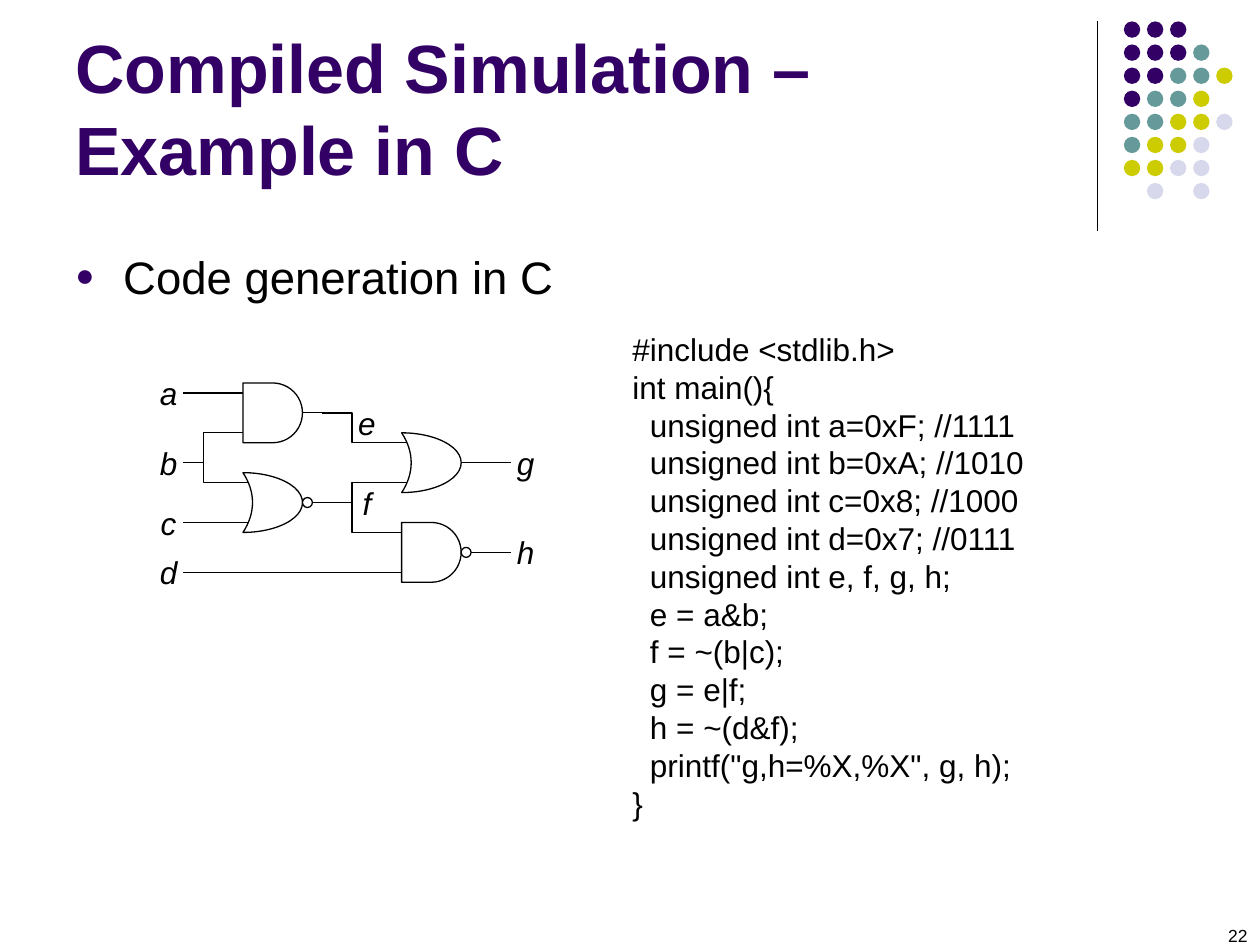
from dataclasses import dataclass

from lxml import etree
from pptx import Presentation
from pptx import util as u
from pptx.dml.color import RGBColor
from pptx.enum import shapes, text
from pptx.oxml.ns import qn


@dataclass(frozen=True)
class Theme:
    font: str = "Arial"
    ink: str = "000000"
    paper: str = "FFFFFF"
    purple: str = "330066"
    teal: str = "669999"
    olive: str = "CCCC00"
    lilac: str = "D8D8EC"
    title: int = 39
    body: int = 26
    code: int = 18
    page: int = 10
    line: float = 0.75


T = Theme()
W, H = u.Inches(10), u.Inches(7.5)
SHAPE = shapes.MSO_SHAPE
RIGHT, LEFT = 3, 1  # connection sites

DOTS = ["PPP", "PPPT", "PPTTO", "PTTO", "TTOOL", "TOOL", "OOLL", " L L"]
DOT_COLORS = {"P": T.purple, "T": T.teal, "O": T.olive, "L": T.lilac}

CODE = [  # indent level, text
    (0, "#include <stdlib.h>"),
    (0, "int main(){"),
    (1, "unsigned int a=0xF; //1111"),
    (1, "unsigned int b=0xA; //1010"),
    (1, "unsigned int c=0x8; //1000"),
    (1, "unsigned int d=0x7; //0111"),
    (1, "unsigned int e, f, g, h;"),
    (1, "e = a&b;"),
    (1, "f = ~(b|c);"),
    (1, "g = e|f;"),
    (1, "h = ~(d&f);"),
    (1, 'printf("g,h=%X,%X", g, h);'),
    (0, "}"),
]

# Circuit grid: 39 columns by 22 rows
LABELS = {"a": (0, 0), "b": (0, 7), "c": (0, 13), "d": (0, 18),
          "e": (20, 3), "f": (20, 11), "g": (36, 7), "h": (36, 16)}
GATES = [  # column, row, outline, inverted output
    (25, 6, SHAPE.MOON, False),
    (9, 1, SHAPE.FLOWCHART_DELAY, False),
    (25, 15, SHAPE.FLOWCHART_DELAY, True),
    (9, 10, SHAPE.MOON, True),
]
INPUT_WIRES = [("a", 7, 2), ("c", 7, 15), ("d", 23, 20)]
OUTPUT_WIRES = [("g", 33, 9), ("h", 33, 18)]
ELBOWS = [(3, 9, 7, 11), (3, 9, 7, 6), (17, 4, 23, 7),
          (17, 13, 23, 11), (17, 13, 23, 16)]


def share(x, y, w, h):
    """Box from percentages of the slide's width and height."""
    return tuple(round(v * side / 100) for v, side in ((x, W), (y, H), (w, W), (h, H)))


def style(p, size, color=T.ink, bold=False, italic=False):
    for r in p.runs:
        f = r.font
        f.name, f.size, f.bold, f.italic = T.font, u.Pt(size), bold, italic
        f.color.rgb = RGBColor.from_string(color)


def add_text(s, box, lines, size, **look):
    tf = s.shapes.add_textbox(*box).text_frame
    tf.word_wrap = True
    tf.text = "\n".join(lines)
    for p in tf.paragraphs:
        style(p, size, **look)
    return tf


def add_shape(s, kind, box, fill=None, line=None):
    sp = s.shapes.add_shape(kind, *box)
    sp.shadow.inherit = False
    if fill:
        sp.fill.solid()
        sp.fill.fore_color.rgb = RGBColor.from_string(fill)
    else:
        sp.fill.background()
    if line:
        sp.line.color.rgb = RGBColor.from_string(line)
        sp.line.width = u.Pt(T.line)
    else:
        sp.line.fill.background()
    return sp


def add_line(s, start, end, kind=shapes.MSO_CONNECTOR.STRAIGHT):
    c = s.shapes.add_connector(kind, *start, *end)
    c.line.color.rgb = RGBColor.from_string(T.ink)
    c.line.width = u.Pt(T.line)
    etree.SubElement(c._element.spPr, qn("a:effectLst"))
    return c


def dot_ornament(s, box):
    x, y, w, h = box
    cell = w / 5
    size = round(cell * 0.71)
    for row, marks in enumerate(DOTS):
        for col, mark in enumerate(marks):
            if mark in DOT_COLORS:
                at = round(x + col * cell), round(y + row * h / len(DOTS))
                add_shape(s, SHAPE.OVAL, (*at, size, size), DOT_COLORS[mark])


def bullet_body(s, box, line):
    p = add_text(s, box, [line], T.body).paragraphs[0]
    p.line_spacing = 1.1
    pPr = p._p.get_or_add_pPr()
    indent = u.Inches(0.38)
    pPr.set("marL", str(indent))
    pPr.set("indent", str(-indent))
    before = etree.SubElement(pPr, qn("a:spcBef"))
    etree.SubElement(before, qn("a:spcPct"), val="20000")
    color = etree.SubElement(pPr, qn("a:buClr"))
    etree.SubElement(color, qn("a:srgbClr"), val=T.purple)
    etree.SubElement(pPr, qn("a:buSzPct"), val="70000")
    etree.SubElement(pPr, qn("a:buFont"), typeface=T.font)
    etree.SubElement(pPr, qn("a:buChar"), char="●")


def code_listing(s, box):
    tf = add_text(s, box, [line for _, line in CODE], T.code)
    for p, (level, _) in zip(tf.paragraphs, CODE):
        p._p.get_or_add_pPr().set("marL", str(level * u.Inches(0.14)))


def circuit(s, box):
    x, y, w, h = box

    def at(col, row):
        return round(x + col * w / 39), round(y + row * h / 22)

    def cells(col, row, cols, rows):
        (x1, y1), (x2, y2) = at(col, row), at(col + cols, row + rows)
        return x1, y1, x2 - x1, y2 - y1

    # Gates, with their pins behind them
    for col, row, kind, inverted in GATES:
        for start, pin in ((-2, 1), (-2, 5), (4, 3)):
            add_line(s, at(col + start, row + pin), at(col + start + 4, row + pin))
        gate = add_shape(s, kind, cells(col, row, 6, 6), T.paper, T.ink)
        if kind == SHAPE.MOON:
            gate.rotation = 180
            gate.adjustments[0] = 0.84
        if inverted:
            add_shape(s, SHAPE.OVAL, cells(col + 6, row + 2.5, 1, 1), T.paper, T.ink)

    # Signal names
    names = {}
    for name, (col, row) in LABELS.items():
        sp = names[name] = add_shape(s, SHAPE.FLOWCHART_PROCESS, cells(col, row, 3, 4))
        tf = sp.text_frame
        tf.text = name
        tf.word_wrap = False
        tf.vertical_anchor = text.MSO_ANCHOR.MIDDLE
        tf.margin_left = tf.margin_right = tf.margin_top = tf.margin_bottom = 0
        tf.paragraphs[0].alignment = text.PP_ALIGN.CENTER
        style(tf.paragraphs[0], T.code, italic=True)

    # Wires
    for name, col, row in INPUT_WIRES:
        add_line(s, at(3, row), at(col, row)).begin_connect(names[name], RIGHT)
    for name, col, row in OUTPUT_WIRES:
        add_line(s, at(col, row), at(36, row)).end_connect(names[name], LEFT)
    for c1, r1, c2, r2 in ELBOWS:
        add_line(s, at(c1, r1), at(c2, r2), shapes.MSO_CONNECTOR.ELBOW)


def main():
    prs = Presentation()
    prs.slide_width, prs.slide_height = W, H
    s = prs.slides.add_slide(prs.slide_layouts[6])

    # Corner ornament and rule
    x, y, _, h = share(87.1, 2.27, 0, 22.13)
    add_line(s, (x, y), (x, y + h))
    dot_ornament(s, share(89.2, 2.27, 9.16, 19.53))

    # Page number, body and title
    tf = add_text(s, share(76.7, 97.2, 23.3, 2.8), ["22"], T.page)
    tf.paragraphs[0].alignment = text.PP_ALIGN.RIGHT
    bullet_body(s, share(5, 25.07, 90, 64.27), "Code generation in C")
    tf = add_text(s, share(5, 1.73, 82.5, 18.93), ["Compiled Simulation – Example in C"],
                  T.title, color=T.purple, bold=True)
    tf.vertical_anchor = text.MSO_ANCHOR.BOTTOM

    # Circuit and its program
    circuit(s, share(12.2, 39.47, 30.7, 23.2))
    code_listing(s, share(49.2, 34.27, 43.3, 56.67))
    prs.save("out.pptx")


if __name__ == "__main__":
    main()
